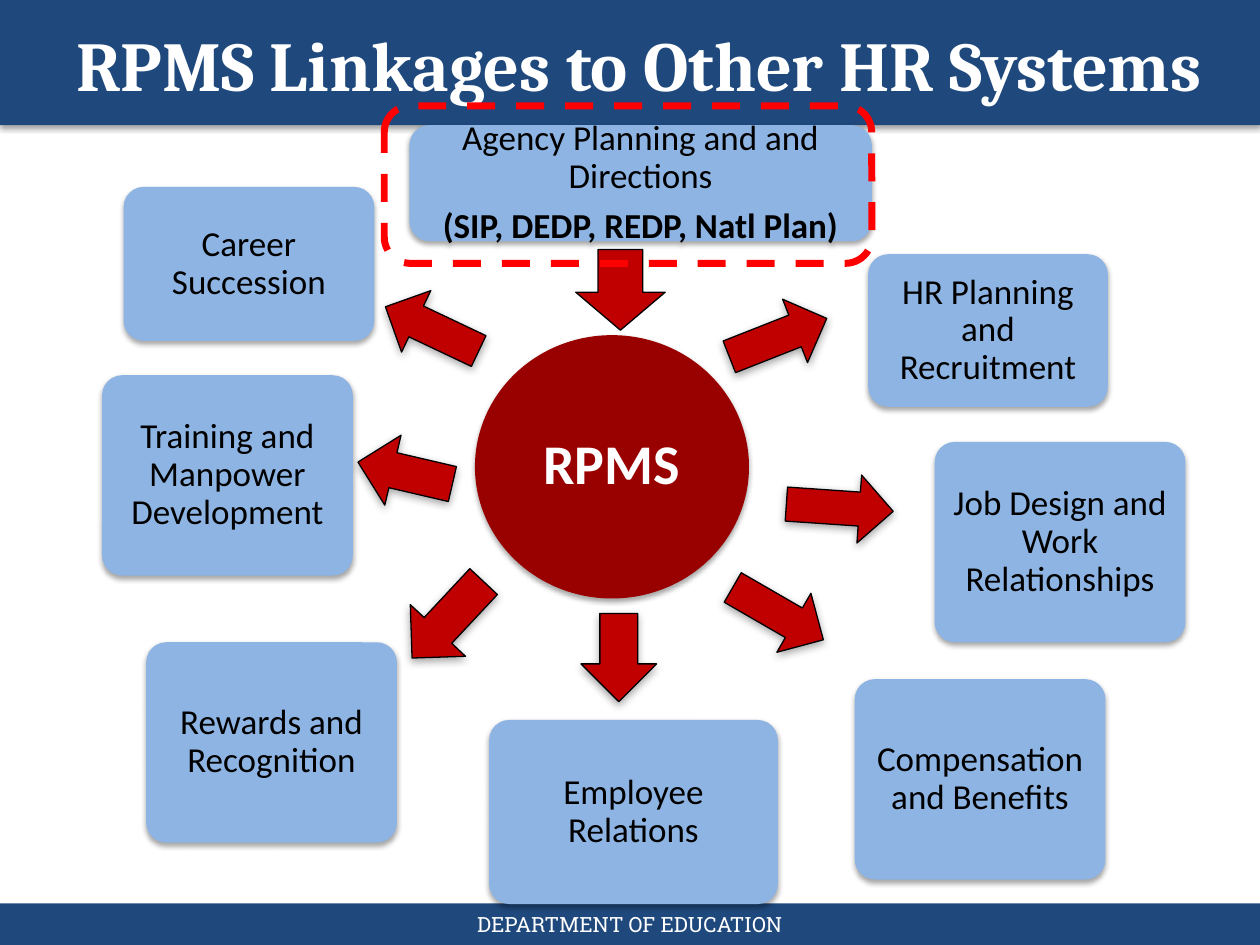
from dataclasses import dataclass

import lxml.etree
import pptx
import pptx.dml.color
import pptx.enum.dml
import pptx.enum.shapes
import pptx.enum.text
import pptx.oxml.ns
import pptx.util

Pt = pptx.util.Pt
Shape = pptx.enum.shapes.MSO_SHAPE
Align = pptx.enum.text.PP_ALIGN


@dataclass(frozen=True)
class Theme:
    navy: str = "1F497D"
    sky: str = "8EB4E3"
    maroon: str = "990000"
    red: str = "C00000"
    highlight: str = "FF0000"
    white: str = "FFFFFF"
    black: str = "000000"
    title_font: str = "Cambria"
    body_font: str = "Calibri"
    footer_font: str = "Roboto Slab"
    title_size: int = 40
    hub_size: int = 32
    body_size: int = 20
    footer_size: int = 12


THEME = Theme()
CORNER_RADIUS = 11.5

TOPICS = [
    ("Job Design and Work Relationships", (534.1, 252.5, 143.3, 114.5)),
    ("HR Planning and Recruitment", (496.1, 145.3, 137, 87.2)),
    ("Compensation and Benefits", (488.4, 388.1, 143.3, 114.5)),
    ("Rewards and Recognition", (83.5, 367, 143.3, 114.5)),
    ("Training and Manpower Development", (58.3, 214.4, 143.3, 114.5)),
    ("Employee Relations", (279.5, 411.4, 165, 105.2)),
    ("Career Succession", (70.6, 106.8, 143.3, 88)),
]

OUTWARD_ARROWS = [
    ((226, 332.6, 59.8, 43.2), 133.1),
    ((203.8, 249.8, 55.4, 41), 193.1),
    ((328.4, 354.2, 50.4, 43.2), 90),
    ((414.7, 173.5, 59.8, 38.9), 338.5),
    ((449.3, 270.7, 61.2, 38.9), 3.9),
    ((217.4, 168.5, 59, 38.9), 205.4),
    ((414.7, 331.2, 59.8, 38.9), 30),
]


def rgb(value):
    return pptx.dml.color.RGBColor.from_string(value)


def add_shadow(shape, blur):
    effects = shape._element.spPr.find(pptx.oxml.ns.qn("a:effectLst"))
    shadow = lxml.etree.SubElement(
        effects, pptx.oxml.ns.qn("a:outerShdw"),
        blurRad=str(Pt(blur)), dist=str(Pt(1.8)), dir="5400000", rotWithShape="0",
    )
    color = lxml.etree.SubElement(shadow, pptx.oxml.ns.qn("a:srgbClr"), val=THEME.black)
    lxml.etree.SubElement(color, pptx.oxml.ns.qn("a:alpha"), val="35000")


def add_figure(slide, kind, box, fill=None, line=None, line_width=0.75, shadow_blur=0):
    shape = slide.shapes.add_shape(kind, *map(Pt, box))
    shape.shadow.inherit = False
    if fill:
        shape.fill.solid()
        shape.fill.fore_color.rgb = rgb(fill)
    else:
        shape.fill.background()
    if line:
        shape.line.color.rgb = rgb(line)
        shape.line.width = Pt(line_width)
    else:
        shape.line.fill.background()
    if shadow_blur:
        add_shadow(shape, shadow_blur)
    return shape


def set_text(shape, text, font, size, color, bold=False, inset=0):
    frame = shape.text_frame
    frame.text = text
    frame.word_wrap = True
    frame.vertical_anchor = pptx.enum.text.MSO_ANCHOR.MIDDLE
    frame.margin_left = frame.margin_right = Pt(inset)
    frame.margin_top = frame.margin_bottom = Pt(inset)
    for paragraph in frame.paragraphs:
        paragraph.alignment = Align.CENTER
        for run in paragraph.runs:
            run.font.name = font
            run.font.size = Pt(size)
            run.font.color.rgb = rgb(color)
            run.font.bold = bold


def set_spacing(shape):
    for paragraph in shape.text_frame.paragraphs:
        paragraph.line_spacing = 0.9
        paragraph.space_after = Pt(7)


def add_header(slide, box):
    left, top, width, height = box
    add_figure(slide, Shape.RECTANGLE, box, THEME.navy, shadow_blur=3.1)
    title = slide.shapes.add_textbox(Pt(left + 8), Pt(top - 6), Pt(width - 6), Pt(height + 13))
    set_text(title, "RPMS Linkages to Other HR Systems", THEME.title_font,
             THEME.title_size, THEME.white, bold=True)


def add_footer(slide, box):
    footer = add_figure(slide, Shape.RECTANGLE, box, THEME.navy)
    set_text(footer, "DEPARTMENT OF EDUCATION", THEME.footer_font,
             THEME.footer_size, THEME.white)


def add_hub(slide, box):
    hub = add_figure(slide, Shape.OVAL, box, THEME.maroon, shadow_blur=3.1)
    set_text(hub, "RPMS", THEME.body_font, THEME.hub_size, THEME.white, bold=True)
    set_spacing(hub)


def add_topic(slide, text, box):
    topic = add_figure(slide, Shape.ROUNDED_RECTANGLE, box, THEME.sky, shadow_blur=3.1)
    topic.adjustments[0] = CORNER_RADIUS / min(box[2:])
    set_text(topic, text, THEME.body_font, THEME.body_size, THEME.black, inset=3.2)
    set_spacing(topic)
    return topic


def add_outward_arrow(slide, box, rotation):
    arrow = add_figure(slide, Shape.RIGHT_ARROW, box, THEME.red, THEME.black, shadow_blur=5)
    arrow.rotation = rotation


def add_agency_arrow(slide, box):
    arrow = add_figure(slide, Shape.DOWN_ARROW, box, THEME.red, THEME.black)
    arrow.adjustments[1] = 0.47


def add_agency(slide, box):
    text = "Agency Planning and and Directions\n(SIP, DEDP, REDP, Natl Plan)"
    agency = add_topic(slide, text, box)
    agency.text_frame.paragraphs[1].runs[0].font.bold = True


def add_highlight(slide, box):
    frame = add_figure(slide, Shape.ROUNDED_RECTANGLE, box, line=THEME.highlight, line_width=4)
    frame.line.dash_style = pptx.enum.dml.MSO_LINE.DASH


def main():
    presentation = pptx.Presentation()
    presentation.slide_width = Pt(720)
    presentation.slide_height = Pt(540)
    slide = presentation.slides.add_slide(presentation.slide_layouts[6])

    add_footer(slide, (0, 516.2, 720, 23.8))
    add_header(slide, (0, 0, 720, 71.6))
    add_hub(slide, (271.4, 191.5, 156.6, 150.5))
    for box, rotation in OUTWARD_ARROWS:
        add_outward_arrow(slide, box, rotation)
    for text, box in TOPICS:
        add_topic(slide, text, box)
    add_agency_arrow(slide, (329, 142.6, 51.1, 46.1))
    add_agency(slide, (234, 71.5, 264.2, 66.4))
    add_highlight(slide, (219.6, 60.5, 278.6, 90))
    presentation.save("out.pptx")


if __name__ == "__main__":
    main()
